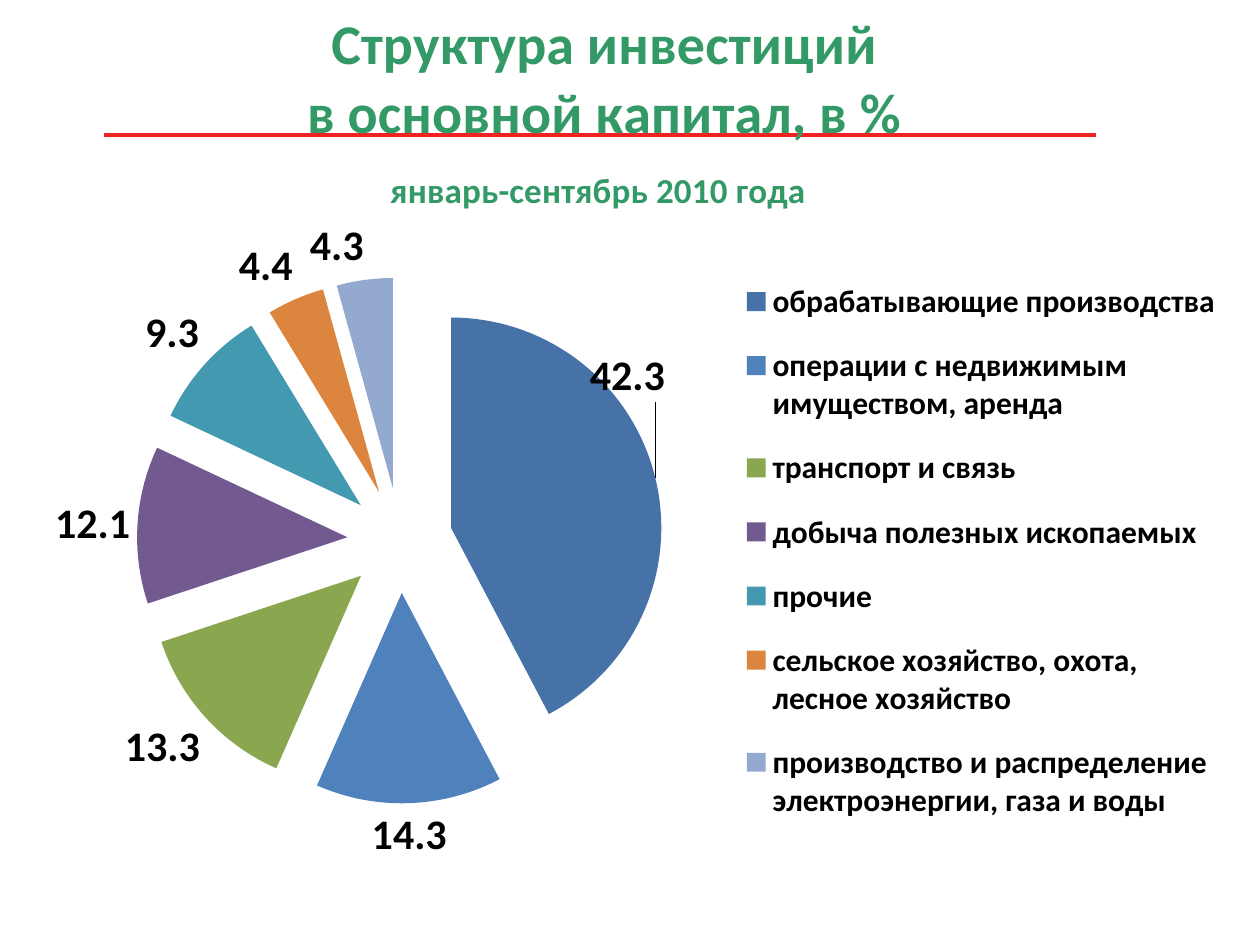
import pptx
import pptx.chart.data
import pptx.dml.color
import pptx.enum.chart
import pptx.enum.shapes
import pptx.oxml
import pptx.oxml.ns
import pptx.util
from pptx.util import Cm, Pt

FONT = "Calibri"
GREEN, RED, BLACK = "339966", "F22222", "000000"
TITLE = [
    ("Структура инвестиций", 32),
    ("в основной капитал, в %", 32),
    ("январь-сентябрь 2010 года", 20),
]
INVESTMENTS = [
    ("обрабатывающие производства", 42.3, "4672A8"),
    ("операции с недвижимым имуществом, аренда", 14.3, "4F81BD"),
    ("транспорт и связь", 13.3, "8AA64F"),
    ("добыча полезных ископаемых", 12.1, "725990"),
    ("прочие", 9.3, "4299B0"),
    ("сельское хозяйство, охота, лесное хозяйство", 4.4, "DC853E"),
    ("производство и распределение электроэнергии, газа и воды", 4.3, "93A9CF"),
]
EXPLOSION = 25


def rgb(value):
    return pptx.dml.color.RGBColor.from_string(value)


def style(font, size, color=BLACK):
    font.name, font.size, font.bold = FONT, Pt(size), True
    font.color.rgb = rgb(color)


def element(tag, inner="", attributes=""):
    namespaces = pptx.oxml.ns.nsdecls("c", "a")
    return pptx.oxml.parse_xml(f"<{tag} {namespaces} {attributes}>{inner}</{tag}>")


def place(parent, index, edge=True, inner=False, **fractions):
    """Give a chart part a manual layout in fractions of the chart."""
    for old in parent.findall(pptx.oxml.ns.qn("c:layout")):
        parent.remove(old)
    parts = '<c:layoutTarget val="inner"/>' if inner else ""
    if edge:
        parts += '<c:xMode val="edge"/><c:yMode val="edge"/>'
    parts += "".join(f'<c:{key} val="{value}"/>' for key, value in fractions.items())
    parent.insert(index, element("c:layout", f"<c:manualLayout>{parts}</c:manualLayout>"))


presentation = pptx.Presentation()
presentation.slide_width, presentation.slide_height = Cm(25.4), Cm(19.05)
slide = presentation.slides.add_slide(presentation.slide_layouts[6])

rule = slide.shapes.add_connector(
    pptx.enum.shapes.MSO_CONNECTOR.STRAIGHT, Cm(2.1), Cm(2.72), Cm(22.1), Cm(2.72))
rule.line.color.rgb = rgb(RED)
rule.line.width = Pt(2.75)
rule._element.spPr.append(element("a:effectLst"))

shares = pptx.chart.data.CategoryChartData(number_format="General")
shares.categories = [name for name, _, _ in INVESTMENTS]
shares.add_series("Series 1", [share for _, share, _ in INVESTMENTS])
chart = slide.shapes.add_chart(
    pptx.enum.chart.XL_CHART_TYPE.PIE,
    Cm(0.5), Cm(-2.46), Cm(24.4), Cm(21.2), shares).chart
chart.font.name, chart.font.size = FONT, Pt(18)
chart.font.color.rgb = rgb(BLACK)
text_properties = chart._chartSpace.find(pptx.oxml.ns.qn("c:txPr"))
text_properties.addprevious(element("c:spPr", "<a:noFill/><a:ln><a:noFill/></a:ln>"))

chart.has_title = True
heading = chart.chart_title.text_frame
heading.text = "\n".join(line for line, _ in TITLE)
for paragraph, (_, size) in zip(heading.paragraphs, TITLE):
    style(paragraph.font, size, GREEN)
    style(paragraph.runs[0].font, size, GREEN)
# A full-size closing space keeps the line pitch of the smaller last line.
closing = heading.paragraphs[-1].add_run()
closing.text = " "
style(closing.font, TITLE[0][1], GREEN)
place(chart.chart_title._element, 1, x=0.23, y=0.12)

chart.has_legend = True
chart.legend.position = pptx.enum.chart.XL_LEGEND_POSITION.RIGHT
chart.legend.include_in_layout = False
style(chart.legend.font, 18)
place(chart.legend._element, 1, x=0.59, y=0.36, w=0.4, h=0.56)

pie = chart.plots[0]
pie.vary_by_categories = True
place(pie._element.getparent(), 0, inner=True, x=0.05, y=0.38, w=0.52, h=0.5)

sectors = pie.series[0]
sectors._element.find(pptx.oxml.ns.qn("c:tx")).addnext(
    element("c:explosion", attributes=f'val="{EXPLOSION}"'))
for index, (_, _, color) in enumerate(INVESTMENTS):
    fill = sectors.points[index].format.fill
    fill.solid()
    fill.fore_color.rgb = rgb(color)

outside = pptx.enum.chart.XL_LABEL_POSITION.OUTSIDE_END
labels = sectors.data_labels
labels.show_value = True
labels.position = outside
style(labels.font, 24)
leader_lines = labels._element.find(pptx.oxml.ns.qn("c:showLeaderLines"))
if leader_lines is None:
    labels._element.append(element("c:showLeaderLines", attributes='val="1"'))
else:
    leader_lines.set("val", "1")

largest_label = sectors.points[0].data_label
style(largest_label.font, 24)
largest_label.position = outside
place(largest_label._dLbl, 1, edge=False, x=-0.06, y=-0.07)

presentation.save("out.pptx")
